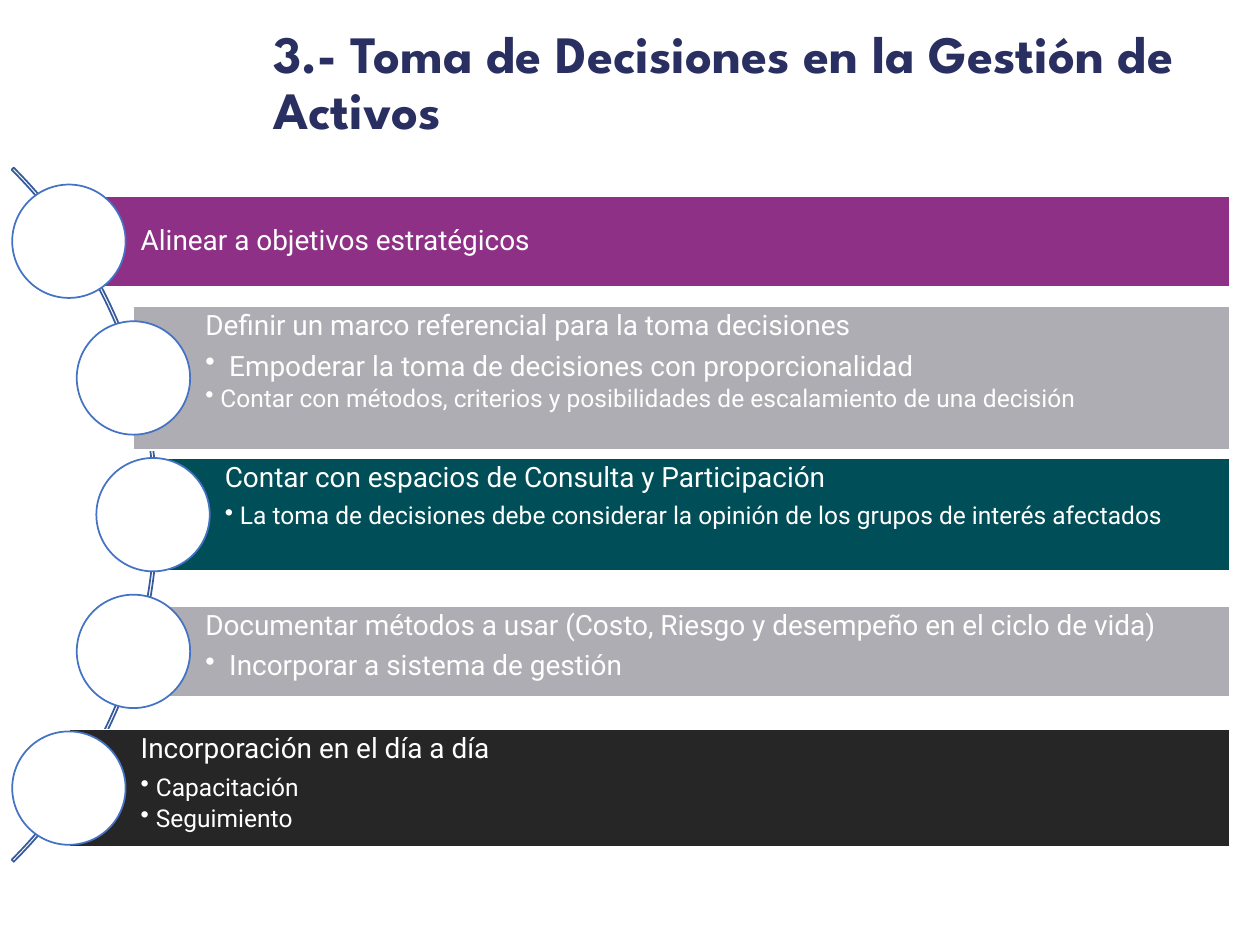
from dataclasses import dataclass
from math import sqrt

from lxml import etree
from pptx import Presentation
from pptx.dml.color import RGBColor
from pptx.enum.shapes import MSO_SHAPE
from pptx.enum.text import MSO_ANCHOR, PP_ALIGN
from pptx.oxml.ns import qn
from pptx.util import Inches, Pt

RECT, OVAL, ARC = MSO_SHAPE.RECTANGLE, MSO_SHAPE.OVAL, MSO_SHAPE.BLOCK_ARC
TOP, MIDDLE = MSO_ANCHOR.TOP, MSO_ANCHOR.MIDDLE
LEFT = PP_ALIGN.LEFT


@dataclass(frozen=True)
class Theme:
    title_font: str = "League Spartan"
    body_font: str = "Roboto"
    title_size: int = 30
    head_size: int = 16
    detail_size: int = 14
    white: str = "FFFFFF"
    navy: str = "292F60"
    purple: str = "8E3086"
    grey: str = "AEADB3"
    teal: str = "004F58"
    black: str = "262626"
    arc_line: str = "365B9D"
    node_line: str = "4472C4"


THEME = Theme()

# Grid of one-inch columns and rows
COLUMNS, ROWS = 10, 7.5

# The nodes sit at equal heights along the arc
ARC_X, ARC_Y, ARC_SIZE = -2.645, 4.085, 7.79
NODE_RADIUS, NODE_ORBIT, NODE_PITCH = 0.45, 3.86, 1.085
BAR_RIGHT = 9.76

# Each step: colour, bar height, anchor, heading, bullets as (text, size)
STEPS = [
    (THEME.purple, 0.72, MIDDLE, "Alinear a objetivos estratégicos", []),
    (THEME.grey, 1.14, TOP, "Definir un marco referencial para la toma decisiones", [
        ("Empoderar la toma de decisiones con proporcionalidad", THEME.head_size),
        ("Contar con métodos, criterios y posibilidades de escalamiento de una decisión",
         THEME.detail_size)]),
    (THEME.teal, 0.9, TOP, "Contar con espacios de Consulta y Participación", [
        ("La toma de decisiones debe considerar la opinión de los grupos de interés afectados",
         THEME.detail_size)]),
    (THEME.grey, 0.72, TOP,
     "Documentar métodos a usar (Costo, Riesgo y desempeño en el ciclo de vida)", [
         ("Incorporar a sistema de gestión", THEME.head_size)]),
    (THEME.black, 0.93, TOP, "Incorporación en el día a día", [
        ("Capacitación", THEME.detail_size),
        ("Seguimiento", THEME.detail_size)]),
]


def write(para, text, *, size, font, color, bold=False, after=0, bullet_indent=None):
    """Fill one paragraph, with a hanging bullet if an indent is given."""
    if bullet_indent:
        para.level = 1
        props = para._p.get_or_add_pPr()
        props.set("marL", str(Inches(bullet_indent)))
        props.set("indent", str(-Inches(bullet_indent)))
        etree.SubElement(props, qn("a:buChar")).set("char", "•")
    para.alignment = LEFT
    para.line_spacing = 0.9
    para.space_after = Pt(after)
    span = para.add_run()
    span.text = text
    span.font.size, span.font.name, span.font.bold = Pt(size), font, bold
    span.font.color.rgb = RGBColor.from_string(color)


class Slide:
    def __init__(self, deck, theme):
        self.theme = theme
        self.page = deck.slides.add_slide(deck.slide_layouts[6])
        self.column = deck.slide_width / COLUMNS
        self.row = deck.slide_height / ROWS

    def place(self, left, top, width, height):
        return (round(left * self.column), round(top * self.row),
                round(width * self.column), round(height * self.row))

    def shape(self, kind, area, *, line, fill=None):
        shape = self.page.shapes.add_shape(kind, *self.place(*area))
        shape.shadow.inherit = False
        if fill:
            shape.fill.solid()
            shape.fill.fore_color.rgb = RGBColor.from_string(fill)
        else:
            shape.fill.background()
        shape.line.color.rgb = RGBColor.from_string(line)
        shape.line.width = Pt(1)
        return shape

    def arc(self):
        corner = ARC_X - ARC_SIZE / 2, ARC_Y - ARC_SIZE / 2
        arc = self.shape(ARC, (*corner, ARC_SIZE, ARC_SIZE), line=self.theme.arc_line)
        for index, value in enumerate((189, 27, 0.003)):
            arc.adjustments[index] = value

    def bar(self, x, y, fill, height, anchor, heading, bullets):
        area = x, y - height / 2, BAR_RIGHT - x, height
        frame = self.shape(RECT, area, line=self.theme.white, fill=fill).text_frame
        frame.word_wrap = True
        frame.vertical_anchor = anchor
        frame.margin_left = Inches(0.57)
        frame.margin_top = frame.margin_right = frame.margin_bottom = Inches(0.04)
        style = {"font": self.theme.body_font, "color": self.theme.white}
        write(frame.paragraphs[0], heading, size=self.theme.head_size, after=6, **style)
        for text, size in bullets:
            indent = 0.19 if size == self.theme.head_size else 0.12
            write(frame.add_paragraph(), text, size=size, after=2.4,
                  bullet_indent=indent, **style)

    def node(self, x, y):
        area = x - NODE_RADIUS, y - NODE_RADIUS, 2 * NODE_RADIUS, 2 * NODE_RADIUS
        self.shape(OVAL, area, line=self.theme.node_line, fill=self.theme.white)

    def title(self, text, area):
        frame = self.page.shapes.add_textbox(*self.place(*area)).text_frame
        frame.word_wrap = True
        frame.vertical_anchor = MIDDLE
        write(frame.paragraphs[0], text, size=self.theme.title_size,
              font=self.theme.title_font, color=self.theme.navy, bold=True)


def main():
    deck = Presentation()
    deck.slide_width, deck.slide_height = Inches(10), Inches(7.5)
    slide = Slide(deck, THEME)

    # Arc with its five steps
    slide.arc()
    for index, step in enumerate(STEPS):
        rise = (index - len(STEPS) // 2) * NODE_PITCH
        x, y = ARC_X + sqrt(NODE_ORBIT ** 2 - rise ** 2), ARC_Y + rise
        slide.bar(x, y, *step)
        slide.node(x, y)

    # Title
    slide.title("3.- Toma de Decisiones en la Gestión de Activos", (2.07, 0.14, 7.46, 1.06))
    deck.save("out.pptx")


if __name__ == "__main__":
    main()
